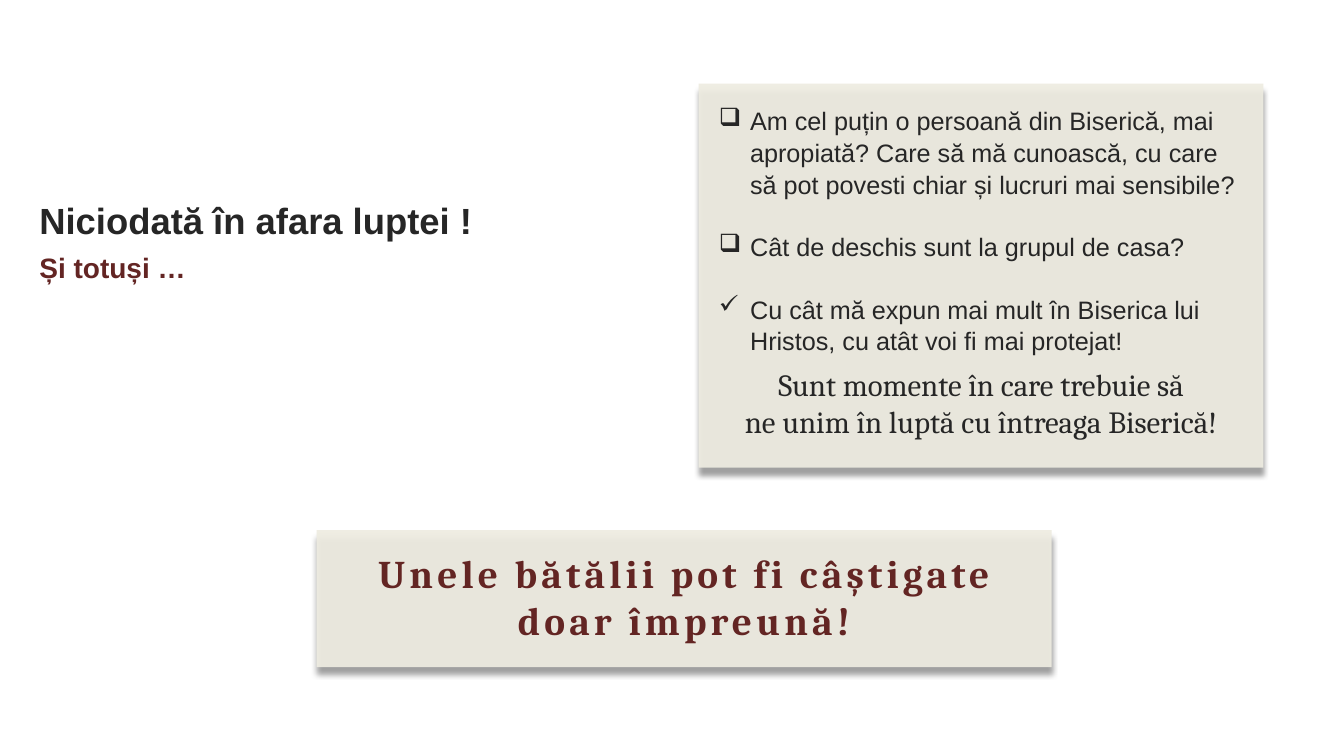
from lxml.etree import SubElement
from pptx import Presentation
from pptx.dml.color import RGBColor
from pptx.enum.shapes import MSO_SHAPE
from pptx.enum.text import MSO_ANCHOR, MSO_AUTO_SIZE, PP_ALIGN
from pptx.oxml.ns import qn
from pptx.util import Inches, Pt

INK, WINE, SAND = "262626", "632523", "EEECE1"


def rgb(code):
    return RGBColor.from_string(code)


def place(shape, left, top, width, height):
    shape.left, shape.top = Inches(left), Inches(top)
    shape.width, shape.height = Inches(width), Inches(height)


def set_frame(frame):
    frame.word_wrap = True
    frame.auto_size = MSO_AUTO_SIZE.NONE
    frame.vertical_anchor = MSO_ANCHOR.TOP


def add_line(frame, text, font, size, color, bold=False, align=PP_ALIGN.LEFT, track=0):
    """Add a paragraph of one run; track is letter spacing in points."""
    para = frame.paragraphs[0]
    if para.runs:
        para = frame.add_paragraph()
    para.alignment = align
    para.space_before = Pt(0)
    run = para.add_run()
    run.text = text
    run.font.name, run.font.size, run.font.bold = font, Pt(size), bold
    run.font.color.rgb = rgb(color)
    if track:
        run.font._element.set("spc", str(track * 100))
    return para


def add_bullet(para, mark, indent):
    props = para._p.get_or_add_pPr()
    props.set("marL", str(Inches(indent)))
    props.set("indent", str(Inches(-indent)))
    SubElement(props, qn("a:buChar"), char=mark)


def add_panel(slide, *box):
    """Add a sand rectangle, slightly see-through, with a shadow below."""
    panel = slide.shapes.add_shape(MSO_SHAPE.RECTANGLE, *map(Inches, box))
    panel.shadow.inherit = False
    panel.fill.solid()
    panel.fill.fore_color.rgb = rgb(SAND)
    panel.line.fill.background()
    props = panel._element.spPr
    tint = props.find(qn("a:solidFill"))[0]
    SubElement(tint, qn("a:alpha"), val="93000")
    shade = SubElement(props.find(qn("a:effectLst")), qn("a:outerShdw"),
                       blurRad=str(Pt(4)), dist=str(Pt(5)),
                       dir="5400000", rotWithShape="0")
    black = SubElement(shade, qn("a:srgbClr"), val="000000")
    SubElement(black, qn("a:alpha"), val="40000")
    return panel


def add_motto(slide, box, lines, size, color, bold=False, track=0):
    frame = slide.shapes.add_textbox(*map(Inches, box)).text_frame
    set_frame(frame)
    for text in lines:
        add_line(frame, text, "Cambria", size, color, bold, PP_ALIGN.CENTER, track)


def add_list(panel, items):
    frame = panel.text_frame
    set_frame(frame)
    frame.margin_left = frame.margin_top = frame.margin_right = Inches(0.2)
    frame.margin_bottom = Inches(0.08)
    for place_no, (mark, text) in enumerate(items):
        para = add_line(frame, text, "Arial", 18, INK)
        para.line_spacing = 1.05
        para.space_before = Pt(22 if place_no else 0)
        add_bullet(para, mark, 0.31)


def add_title(slide):
    title = slide.shapes.title
    place(title, 0.29, 1.92, 5.28, 0.96)
    frame = title.text_frame
    set_frame(frame)
    head = add_line(frame, "Niciodată în afara luptei !", "Arial", 26, INK, True)
    head.space_after = Pt(6)
    add_line(frame, "Și totuși …", "Arial", 20, WINE, True)


def main():
    deck = Presentation()
    deck.slide_width, deck.slide_height = Inches(13.33), Inches(7.5)
    slide = deck.slides.add_slide(deck.slide_layouts[5])

    add_title(slide)

    add_panel(slide, 3.14, 5.26, 7.29, 1.36)
    add_motto(slide, (3.14, 5.4, 7.29, 1.04),
              ["Unele bătălii pot fi câștigate", "doar împreună!"],
              28, WINE, True, 3)

    panel = add_panel(slide, 6.93, 0.83, 5.6, 3.81)
    add_list(panel, [
        ("❑", "Am cel puțin o persoană din Biserică, mai apropiată? "
              "Care să mă cunoască, cu care să pot povesti chiar și "
              "lucruri mai sensibile?"),
        ("❑", "Cât de deschis sunt la grupul de casa?"),
        ("✓", "Cu cât mă expun mai mult în Biserica lui Hristos, "
              "cu atât voi fi mai protejat!"),
    ])
    add_motto(slide, (6.93, 3.58, 5.6, 0.84),
              ["Sunt momente în care trebuie să",
               "ne unim în luptă cu întreaga Biserică!"], 22, INK)

    deck.save("out.pptx")


if __name__ == "__main__":
    main()
